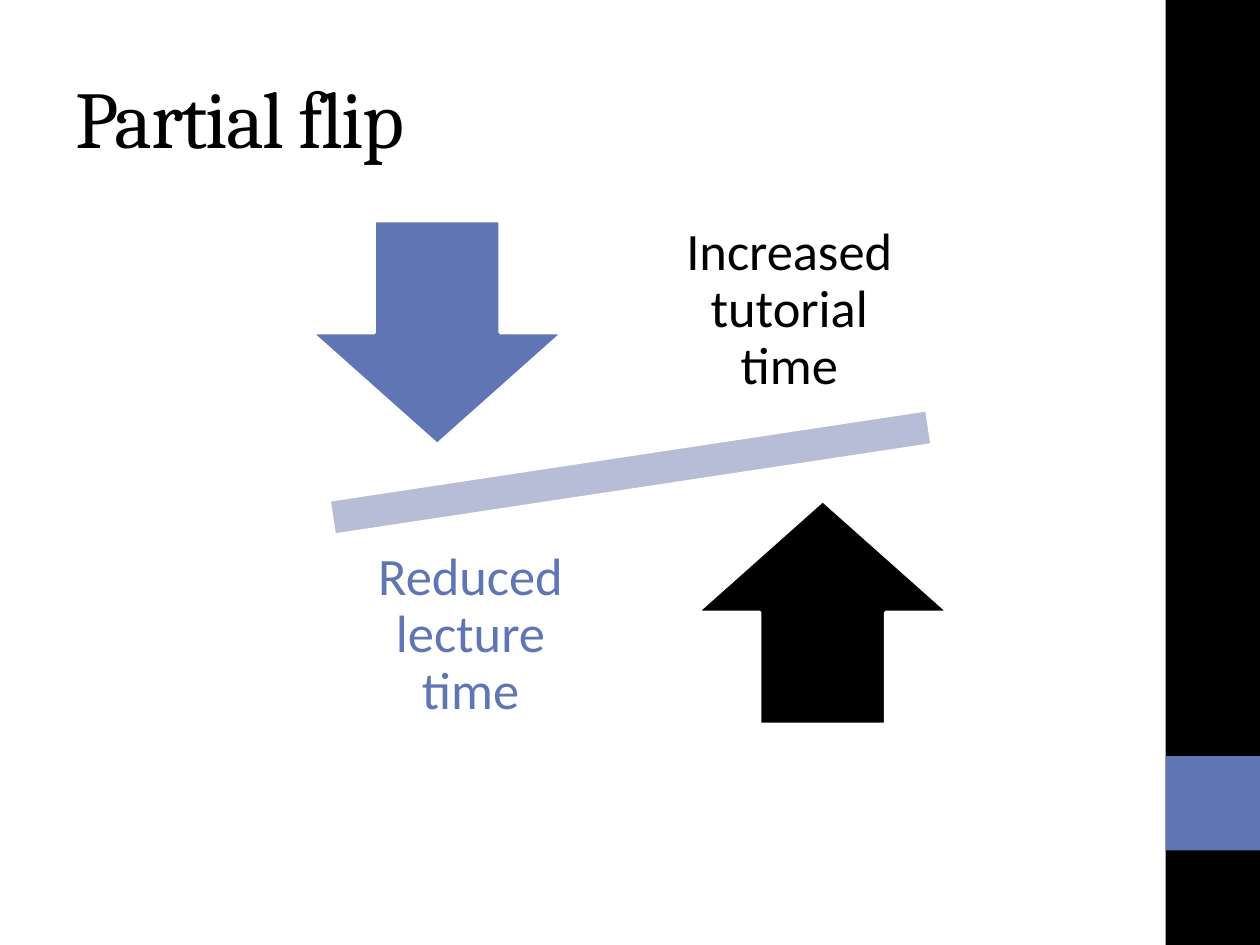
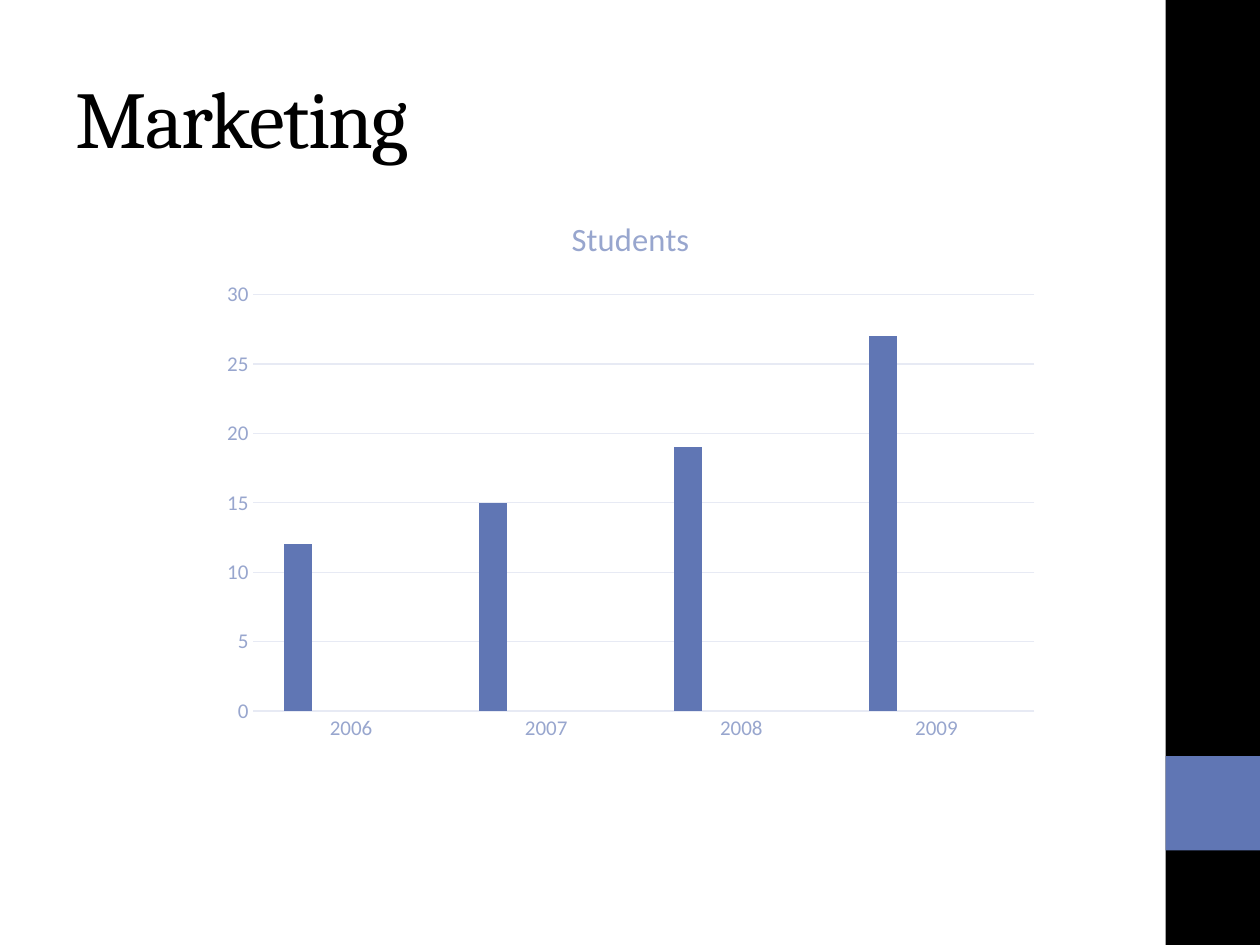
import pptx
import pptx.chart.data
import pptx.dml.color
import pptx.enum.chart
import pptx.enum.shapes
import pptx.enum.text
import pptx.util

Inches, Pt = pptx.util.Inches, pptx.util.Pt
SHAPE = pptx.enum.shapes.MSO_SHAPE
ALIGN = pptx.enum.text.PP_ALIGN

COLORS = {
    "black": "000000", "white": "FFFFFF", "blue": "6076B4",
    "beam": "B7BDD6", "label": "98A6CE", "grid": "E7EAF4",
    "red": "9C5252", "orange": "E68422", "brown": "846648",
}
HEADING_FONT, BODY_FONT = "Cambria", "Calibri"
CONTENT_BOX = (1.67, 1.53, 6.67, 4.44)


def rgb(name):
    return pptx.dml.color.RGBColor.from_string(COLORS[name])


def style_font(font, size, color, face=BODY_FONT):
    font.size, font.name, font.bold = Pt(size), face, False
    font.color.rgb = rgb(color)


def add_text(slide, text, box, *, size, color, face=BODY_FONT, align=ALIGN.LEFT,
             inset=(0.1, 0.05), line_spacing=None, tracking=None):
    """Add a middle-anchored text box; tracking is in points."""
    frame = slide.shapes.add_textbox(*map(Inches, box)).text_frame
    frame.word_wrap = True
    frame.vertical_anchor = pptx.enum.text.MSO_ANCHOR.MIDDLE
    frame.margin_left = frame.margin_right = Inches(inset[0])
    frame.margin_top = frame.margin_bottom = Inches(inset[1])
    paragraph = frame.paragraphs[0]
    paragraph.alignment, paragraph.line_spacing = align, line_spacing
    run = paragraph.add_run()
    run.text = text
    style_font(run.font, size, color, face)
    if tracking is not None:
        run._r.get_or_add_rPr().set("spc", str(tracking * 100))


def add_filled(slide, preset, box, color, outline=None, rotation=0):
    shape = slide.shapes.add_shape(preset, *map(Inches, box))
    shape.shadow.inherit = False
    shape.rotation = rotation
    shape.fill.solid()
    shape.fill.fore_color.rgb = rgb(color)
    if outline:
        shape.line.color.rgb = rgb(outline)
        shape.line.width = Pt(2)
    else:
        shape.line.fill.background()


def add_base_slide(deck, title):
    """Add a slide with the side band and the title."""
    slide = deck.slides.add_slide(deck.slide_layouts[6])
    add_filled(slide, SHAPE.RECTANGLE, (9.25, 0, 0.75, 7.5), "black")
    add_filled(slide, SHAPE.RECTANGLE, (9.25, 6, 0.75, 0.75), "blue")
    add_text(slide, title, (0.5, 0.3, 4.81, 1.25), size=46, color="black",
             face=HEADING_FONT, tracking=-1)
    return slide


def add_balance(slide, box):
    """Draw a tilted beam with an arrow and a label on each side."""
    left, top, width, height = box
    beam_width, beam_height = 6.53, 1.2
    add_filled(slide, SHAPE.MATH_MINUS,
               (left + (width - beam_width) / 2, top + (height - beam_height) / 2,
                beam_width, beam_height), "beam", "white", rotation=351.4)
    sides = [
        (SHAPE.DOWN_ARROW, (0.8, 0.22), "Reduced lecture time", (1, 2.58), "blue"),
        (SHAPE.UP_ARROW, (3.86, 2.44), "Increased tutorial time", (3.53, 0), "black"),
    ]
    for arrow, (arrow_x, arrow_y), label, (label_x, label_y), color in sides:
        add_filled(slide, arrow, (left + arrow_x, top + arrow_y, 2, 1.78), color, "white")
        add_text(slide, label, (left + label_x, top + label_y, 2.13, 1.87), size=30,
                 color=color, align=ALIGN.CENTER, inset=(0.23, 0.23), line_spacing=0.9)


def style_grid_line(line):
    line.color.rgb = rgb("grid")
    line.width = Pt(0.75)


def add_students_chart(slide, box):
    data = pptx.chart.data.CategoryChartData()
    data.categories = ["2006", "2007", "2008", "2009"]
    students = [12, 15, 19, 27]
    series_colors = ["blue", "red", "orange", "brown"]
    for number in range(1, len(series_colors) + 1):
        data.add_series(f"Series {number}", students if number == 1 else [None] * 4)
    chart = slide.shapes.add_chart(pptx.enum.chart.XL_CHART_TYPE.COLUMN_CLUSTERED,
                                   *map(Inches, box), data).chart
    style_font(chart.font, 10, "blue")
    chart.has_legend = False
    chart.has_title = True
    heading = chart.chart_title.text_frame
    heading.text = "Students"
    style_font(heading.paragraphs[0].runs[0].font, 18.6, "label")
    chart.chart_title.include_in_layout = False

    plot = chart.plots[0]
    plot.vary_by_categories = False
    plot.gap_width, plot.overlap = 219, -27
    for series, color in zip(plot.series, series_colors):
        series.format.fill.solid()
        series.format.fill.fore_color.rgb = rgb(color)
        series.invert_if_negative = False

    years, counts = chart.category_axis, chart.value_axis
    for axis in (years, counts):
        axis.major_tick_mark = axis.minor_tick_mark = pptx.enum.chart.XL_TICK_MARK.NONE
        style_font(axis.tick_labels.font, 12, "label")
    style_grid_line(years.format.line)
    counts.format.line.fill.background()
    counts.has_major_gridlines = True
    style_grid_line(counts.major_gridlines.format.line)
    counts.minimum_scale, counts.maximum_scale, counts.major_unit = 0, 30, 5


def main():
    deck = pptx.Presentation()
    deck.slide_width, deck.slide_height = Inches(10), Inches(7.5)
    add_balance(add_base_slide(deck, "Partial flip"), CONTENT_BOX)
    add_students_chart(add_base_slide(deck, "Marketing"), CONTENT_BOX)
    deck.save("out.pptx")


if __name__ == "__main__":
    main()
